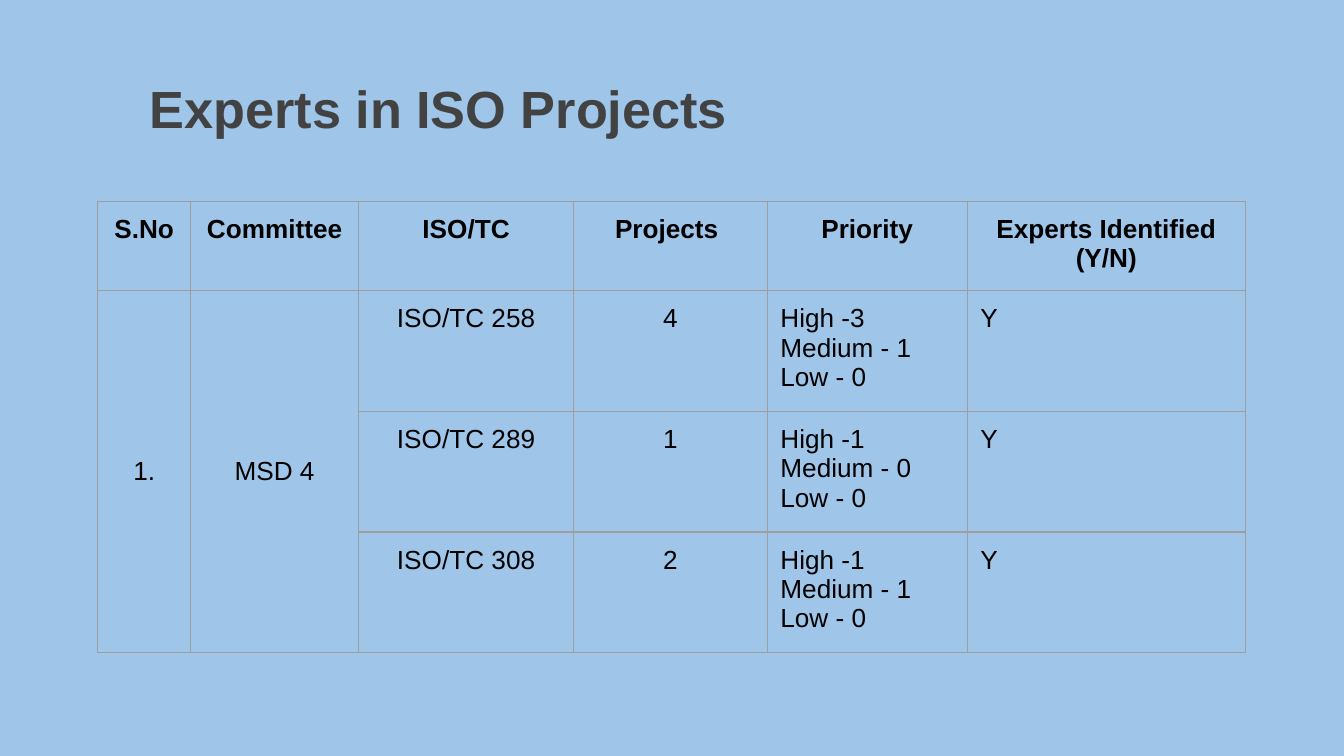
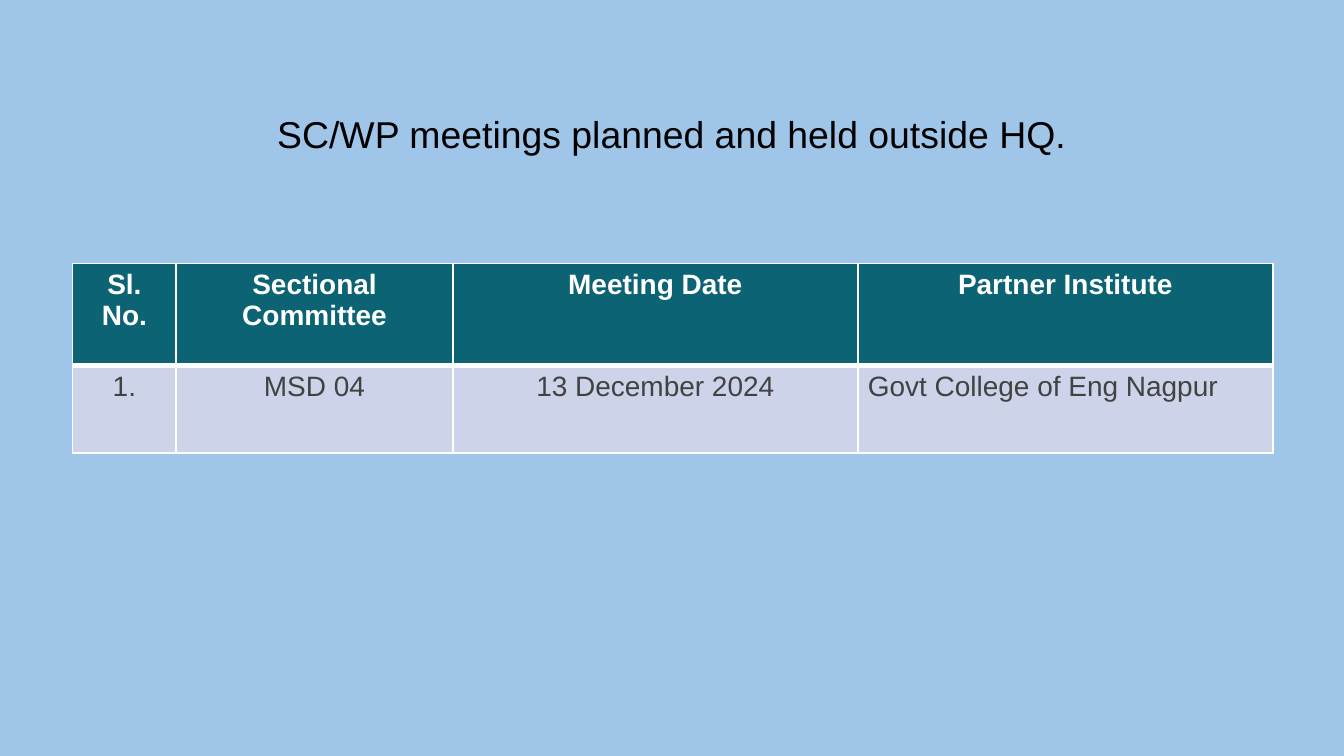
from lxml import etree
from pptx import Presentation
from pptx.dml.color import RGBColor
from pptx.enum.text import MSO_ANCHOR, PP_ALIGN
from pptx.oxml.ns import qn
from pptx.util import Cm, Pt

LEFT, CENTER = PP_ALIGN.LEFT, PP_ALIGN.CENTER
TOP, MIDDLE = MSO_ANCHOR.TOP, MSO_ANCHOR.MIDDLE

SKY = RGBColor(0x9F, 0xC5, 0xE8)
DARK = RGBColor(0x42, 0x42, 0x42)
BLACK = RGBColor(0, 0, 0)
WHITE = RGBColor(0xFF, 0xFF, 0xFF)
GREY = RGBColor(0x9E, 0x9E, 0x9E)
TEAL = RGBColor(0x0B, 0x63, 0x74)
LAVENDER = RGBColor(0xCD, 0xD4, 0xEA)
FONT = "Arial"

EXPERTS = [
    ["S.No", "Committee", "ISO/TC", "Projects ", "Priority", "Experts Identified (Y/N)"],
    ["1.", "MSD 4", "ISO/TC 258", "4", "High -3\nMedium - 1\nLow - 0", "Y"],
    ["", "", "ISO/TC 289", "1", "High -1\nMedium - 0\nLow - 0", "Y"],
    ["", "", "ISO/TC 308", "2", "High -1\nMedium - 1\nLow - 0", "Y"],
]
MEETINGS = [
    ["Sl. No.", "Sectional Committee", "Meeting Date", "Partner Institute"],
    ["1.", "MSD 04", "13 December 2024", "Govt College of Eng Nagpur"],
]

# Widths are in points, in the order left, right, top, bottom.
EXPERT_CELL = {"size": 14, "color": BLACK, "fill": None, "margins": (0.25, 0.25),
               "line": GREY, "widths": (0.75, 0.75, 0.75, 0.75)}
MEETING_HEAD = {"size": 15, "color": WHITE, "fill": TEAL, "margins": (0.19, 0.1),
                "line": WHITE, "widths": (1, 1, 1, 3)}
MEETING_BODY = {**MEETING_HEAD, "color": DARK, "fill": LAVENDER, "widths": (1, 1, 3, 1)}


def set_all(obj, values):
    for name, value in values.items():
        setattr(obj, name, value)


def set_margins(obj, x, y):
    set_all(obj, {"margin_left": Cm(x), "margin_right": Cm(x),
                  "margin_top": Cm(y), "margin_bottom": Cm(y)})


def write(tf, text, size, color, bold, align, spacing=None):
    """Fill a text frame, one paragraph for each line of text."""
    for i, line in enumerate(text.split("\n")):
        p = tf.add_paragraph() if i else tf.paragraphs[0]
        set_all(p, {"alignment": align, "line_spacing": spacing})
        r = p.add_run()
        r.text = line
        set_all(r.font, {"name": FONT, "size": Pt(size), "bold": bold})
        r.font.color.rgb = color


def add_slide(prs):
    s = prs.slides.add_slide(prs.slide_layouts[6])
    s.background.fill.solid()
    s.background.fill.fore_color.rgb = SKY
    return s


def add_title(s, box, text, size, color, bold=False, align=LEFT):
    tf = s.shapes.add_textbox(*map(Cm, box)).text_frame
    set_all(tf, {"word_wrap": True, "vertical_anchor": MIDDLE})
    set_margins(tf, 0.19, 0.1)
    write(tf, text, size, color, bold, align, 0.9)


def set_borders(cell, color, widths):
    tcPr = cell._tc.get_or_add_tcPr()
    for i, (side, width) in enumerate(zip("LRTB", widths)):
        ln = etree.Element(qn(f"a:ln{side}"), w=str(Pt(width)))
        fill = etree.SubElement(ln, qn("a:solidFill"))
        etree.SubElement(fill, qn("a:srgbClr"), val=str(color))
        tcPr.insert(i, ln)


def format_cell(cell, text, style, bold, align, anchor):
    if style["fill"] is None:
        cell.fill.background()
    else:
        cell.fill.solid()
        cell.fill.fore_color.rgb = style["fill"]
    set_borders(cell, style["line"], style["widths"])
    set_margins(cell, *style["margins"])
    cell.vertical_anchor = anchor
    if text:
        write(cell.text_frame, text, style["size"], style["color"], bold, align)


def add_table(s, left, top, cols, rows, data, head, body, left_cols, merged_cols=()):
    """left_cols are left-aligned below the header; merged_cols span all body rows."""
    shape = s.shapes.add_table(len(rows), len(cols), Cm(left), Cm(top),
                               Cm(sum(cols)), Cm(sum(rows)))
    table = shape.table
    set_all(table, {"first_row": True, "horz_banding": False})
    for col, width in zip(table.columns, cols):
        col.width = Cm(width)
    for row, height in zip(table.rows, rows):
        row.height = Cm(height)
    for c in merged_cols:
        table.cell(1, c).merge(table.cell(len(rows) - 1, c))
    for i, line in enumerate(data):
        for j, text in enumerate(line):
            is_head = i == 0
            format_cell(table.cell(i, j), text, head if is_head else body, is_head,
                        LEFT if j in left_cols and not is_head else CENTER,
                        MIDDLE if j in merged_cols and not is_head else TOP)


def experts_slide(prs):
    s = add_slide(prs)
    add_title(s, (2.64, 1.42, 21.9, 1.37), "Experts in ISO Projects", 28, DARK, True)
    add_table(s, 1.85, 3.81, (1.75, 3.18, 4.06, 3.66, 3.78, 5.26), (1.6,) + (2.17,) * 3,
              EXPERTS, EXPERT_CELL, EXPERT_CELL, left_cols=(4, 5), merged_cols=(0, 1))


def meetings_slide(prs):
    s = add_slide(prs)
    add_title(s, (1.75, 1.19, 21.9, 2.77), "SC/WP meetings planned and held outside HQ.",
              20, BLACK, align=CENTER)
    add_table(s, 1.37, 4.98, (1.96, 5.23, 7.65, 7.85), (1.93, 1.65),
              MEETINGS, MEETING_HEAD, MEETING_BODY, left_cols=(3,))


def main():
    prs = Presentation()
    set_all(prs, {"slide_width": Cm(25.4), "slide_height": Cm(14.29)})
    experts_slide(prs)
    meetings_slide(prs)
    prs.save("out.pptx")


if __name__ == "__main__":
    main()
